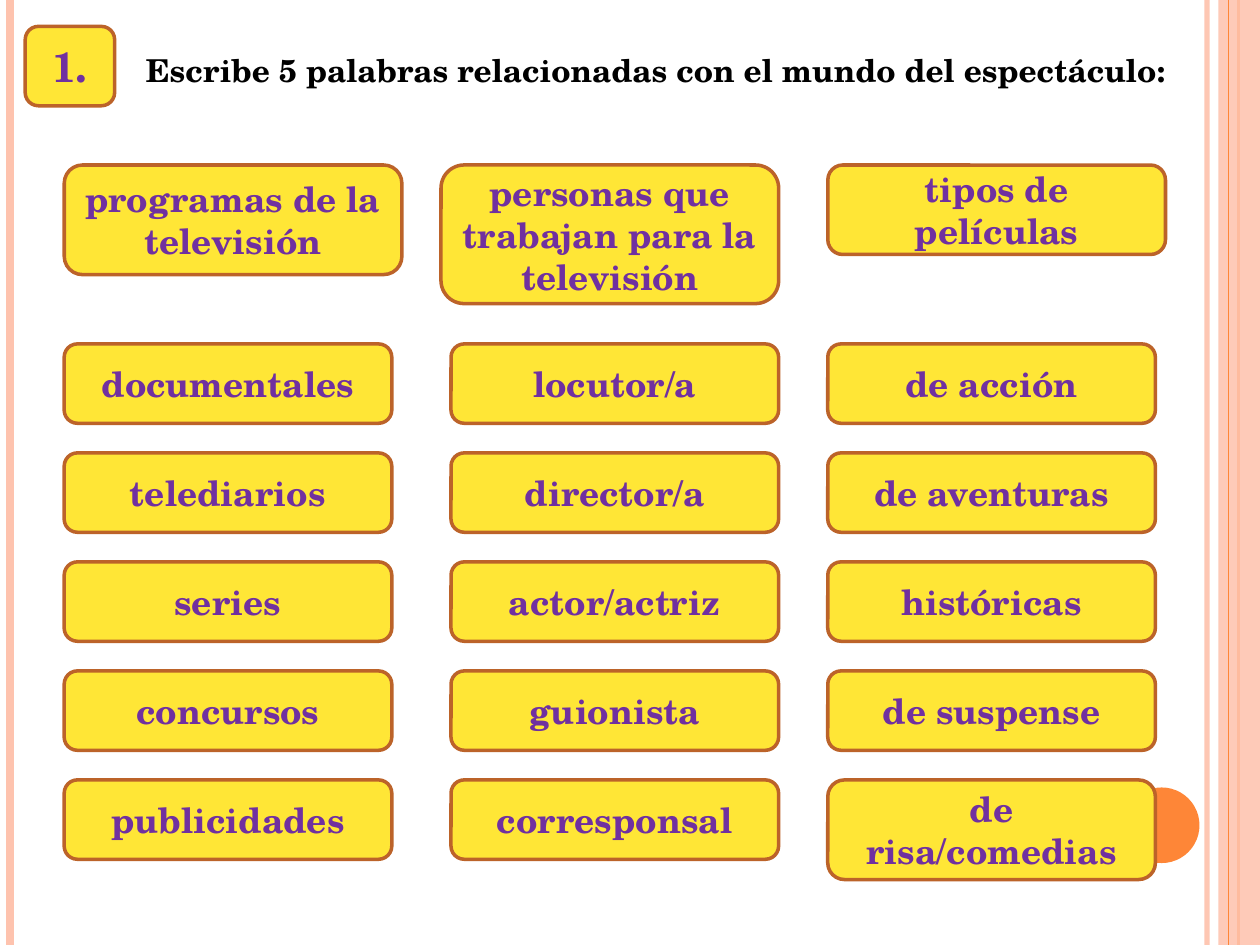
from dataclasses import dataclass

from pptx import Presentation
from pptx.dml.color import RGBColor
from pptx.enum.shapes import MSO_CONNECTOR as Connector, MSO_SHAPE as Shape
from pptx.enum.text import MSO_ANCHOR as Anchor, MSO_AUTO_SIZE as AutoSize, PP_ALIGN as Align
from pptx.oxml.ns import qn
from pptx.oxml.xmlchemy import OxmlElement
from pptx.util import Inches, Pt


@dataclass(frozen=True)
class Theme:
    font: str = "TeX Gyre Schola"
    yellow: str = "FFE636"
    brown: str = "BC6329"
    purple: str = "7030A0"
    black: str = "000000"
    peach: str = "FEC3AE"
    orange: str = "FE8637"
    title_size: int = 18
    card_size: int = 20
    number_size: int = 24
    border: int = 2


class SlideBuilder:
    def __init__(self, slide, theme):
        self.slide = slide
        self.theme = theme

    def set_opacity(self, element, percent):
        """Add transparency to the solid colour found below an element."""
        color = next(element.iter(qn("a:srgbClr")))
        alpha = OxmlElement("a:alpha")
        alpha.set("val", str(percent * 1000))
        color.append(alpha)

    def add_text(self, frame, text, size, color, align):
        paragraph = frame.paragraphs[0]
        paragraph.alignment = align
        run = paragraph.add_run()
        run.text = text
        formats = {"name": self.theme.font, "size": Pt(size), "bold": True}
        for name, value in formats.items():
            setattr(run.font, name, value)
        run.font.color.rgb = RGBColor.from_string(color)

    def stripe(self, x, color, width, opacity=100):
        connector = self.slide.shapes.add_connector(
            Connector.STRAIGHT, Inches(x), 0, Inches(x), Inches(7.5))
        connector.line.color.rgb = RGBColor.from_string(color)
        connector.line.width = Pt(width)
        properties = connector._element.spPr
        if opacity < 100:
            self.set_opacity(properties, opacity)
        properties.append(OxmlElement("a:effectLst"))

    def shape(self, kind, box, fill, opacity=100):
        shape = self.slide.shapes.add_shape(kind, *map(Inches, box))
        shape.shadow.inherit = False
        shape.fill.solid()
        shape.fill.fore_color.rgb = RGBColor.from_string(fill)
        shape.line.fill.background()
        if opacity < 100:
            self.set_opacity(shape._element.spPr, opacity)
        return shape

    def card(self, text, box, size=None):
        theme = self.theme
        card = self.shape(Shape.ROUNDED_RECTANGLE, box, theme.yellow)
        card.line.color.rgb = RGBColor.from_string(theme.brown)
        card.line.width = Pt(theme.border)
        frame = card.text_frame
        for name, value in {"word_wrap": True, "vertical_anchor": Anchor.MIDDLE}.items():
            setattr(frame, name, value)
        self.add_text(frame, text, size or theme.card_size, theme.purple, Align.CENTER)

    def title(self, text, box):
        frame = self.slide.shapes.add_textbox(*map(Inches, box)).text_frame
        for name, value in {"word_wrap": False, "auto_size": AutoSize.SHAPE_TO_FIT_TEXT}.items():
            setattr(frame, name, value)
        self.add_text(frame, text, self.theme.title_size, self.theme.black, Align.LEFT)


# Each column: heading, heading left, heading height, card left, words
COLUMNS = [
    ("programas de la televisión", 0.51, 0.87, 0.51,
     ["documentales", "telediarios", "series", "concursos", "publicidades"]),
    ("personas que trabajan para la televisión", 3.5, 1.1, 3.58,
     ["locutor/a", "director/a", "actor/actriz", "guionista", "corresponsal"]),
    ("tipos de películas", 6.57, 0.71, 6.57,
     ["de acción", "de aventuras", "históricas", "de suspense", "de risa/comedias"]),
]
HEADING_TOP, HEADING_WIDTH = 1.31, 2.68
CARD_TOP, CARD_BOTTOM_ROW, CARD_WIDTH, CARD_HEIGHT = 2.73, 6.19, 2.6, 0.63
CARD_STEP = (CARD_BOTTOM_ROW - CARD_TOP) / 4
TALL_CARDS = {"de risa/comedias": 0.79}


def main():
    presentation = Presentation()
    presentation.slide_width, presentation.slide_height = Inches(10), Inches(7.5)
    slide = presentation.slides.add_slide(presentation.slide_layouts[6])
    theme = Theme()
    builder = SlideBuilder(slide, theme)

    # Side decoration
    builder.stripe(9.58, theme.peach, 3, opacity=93)
    builder.stripe(0.08, theme.peach, 4.5)
    builder.stripe(9.83, theme.orange, 1.5)
    builder.shape(Shape.RECTANGLE, (9.67, 0, 0.33, 7.5), theme.peach, opacity=87)
    builder.stripe(9.75, theme.orange, 0.75)
    builder.shape(Shape.OVAL, (8.92, 6.25, 0.6, 0.6), theme.orange)

    # Task number and instruction
    builder.title("Escribe 5 palabras relacionadas con el mundo del espectáculo:",
                  (1.06, 0.36, 8.3, 0.4))
    builder.card("1.", (0.2, 0.21, 0.71, 0.63), theme.number_size)

    # Word columns
    for heading, heading_left, heading_height, left, words in COLUMNS:
        builder.card(heading, (heading_left, HEADING_TOP, HEADING_WIDTH, heading_height))
        for row, word in enumerate(words):
            height = TALL_CARDS.get(word, CARD_HEIGHT)
            builder.card(word, (left, CARD_TOP + row * CARD_STEP, CARD_WIDTH, height))

    presentation.save("out.pptx")


if __name__ == "__main__":
    main()
